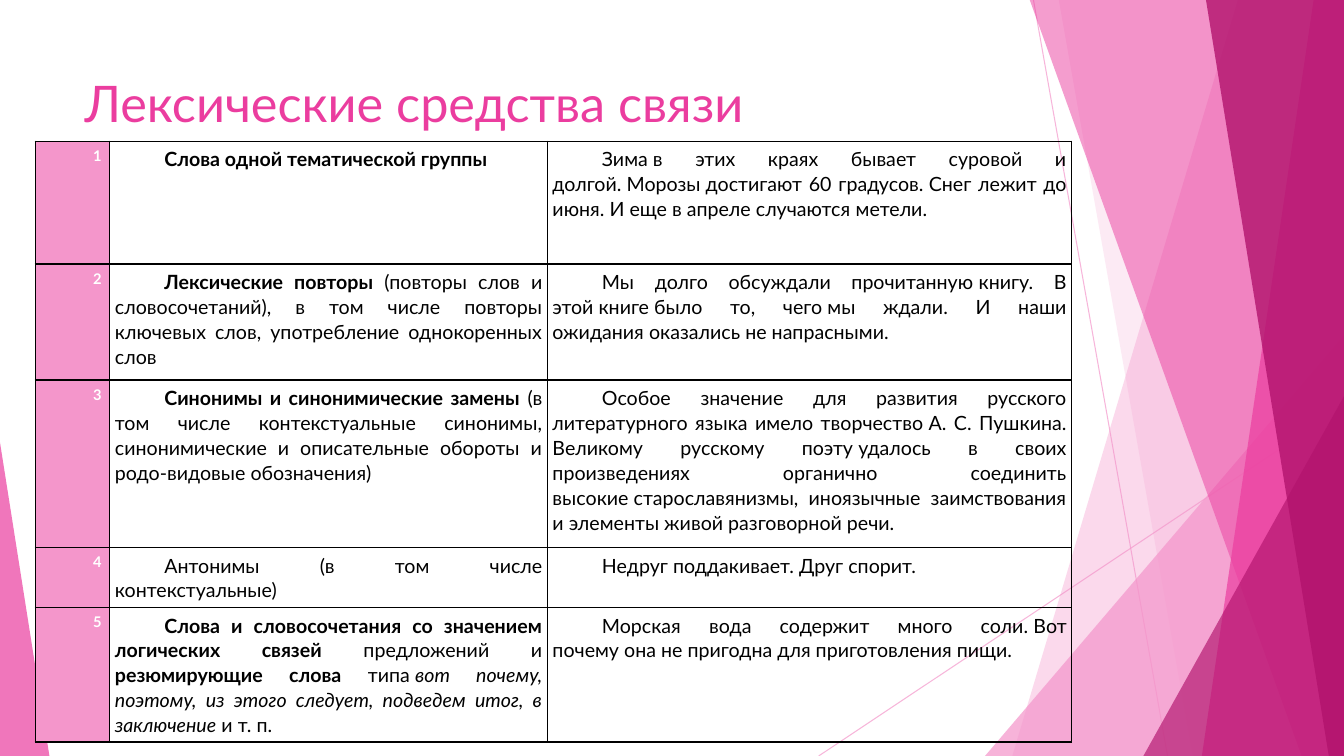
from lxml import etree
from pptx import Presentation
from pptx.dml.color import RGBColor
from pptx.enum.shapes import MSO_CONNECTOR, MSO_SHAPE
from pptx.enum.text import MSO_ANCHOR, PP_ALIGN
from pptx.oxml import parse_xml
from pptx.oxml.ns import nsdecls, qn
from pptx.util import Inches, Pt

FONT = "Lato"
PINK, MAGENTA, PLUM = "F496CB", "EB3D9F", "B2136D"
NBSP = chr(160)  # typed as ~ in the table content


def paint(fill, color, alpha=100):
    """Solid fill with opacity in percent."""
    fill.solid()
    fill.fore_color.rgb = RGBColor.from_string(color)
    if alpha < 100:
        clr = fill._xPr.find(".//" + qn("a:srgbClr"))
        etree.SubElement(clr, qn("a:alpha"), val=str(alpha * 1000))


prs = Presentation()
prs.slide_width, prs.slide_height = Inches(13.33), Inches(7.5)
s = prs.slides.add_slide(prs.slide_layouts[6])

# Thin crossing lines
for x1, y1, x2, y2 in [(10.25, 0, 11.58, 7.5), (13.33, 4.03, 8.12, 7.5)]:
    line = s.shapes.add_connector(MSO_CONNECTOR.STRAIGHT, Inches(x1), Inches(y1), Inches(x2), Inches(y2))
    line.line.width = Pt(0.75)
    paint(line.line.fill, PINK, 70)
    etree.SubElement(line._element.spPr, qn("a:effectLst"))

# Translucent facets, back to front
# band: top-left x, bottom-left x; triangle: left, top, width, apex position
facets = [
    ("band", (12.28, 10.04), PINK, 36),
    ("band", (10.5, 11.83), PINK, 20),
    ("triangle", (9.77, 3.33, 3.56, 1), PINK, 72),
    ("band", (10.21, 12.91), MAGENTA, 50),
    ("band", (13.03, 11.92), MAGENTA, 70),
    ("band", (11.96, 13.18), PLUM, 80),
    ("triangle", (11.34, 3.93, 1.99, 1), PLUM, 66),
    ("triangle", (0, 4.39, 0.49, 0), MAGENTA, 70),
]
for kind, geometry, color, alpha in facets:
    if kind == "band":
        top_x, bottom_x = geometry
        corners = [(13.33, -0.01), (13.33, 7.5), (bottom_x, 7.5)]
        outline = s.shapes.build_freeform(Inches(top_x), Inches(-0.01))
        outline.add_line_segments([(Inches(x), Inches(y)) for x, y in corners])
        sp = outline.convert_to_shape()
    else:
        left, top, width, apex = geometry
        sp = s.shapes.add_shape(MSO_SHAPE.ISOSCELES_TRIANGLE, Inches(left), Inches(top),
                                Inches(width), Inches(7.5 - top))
        sp.adjustments[0] = apex
    sp.shadow.inherit = False
    sp.line.fill.background()
    paint(sp.fill, color, alpha)

# Title
tf = s.shapes.add_textbox(Inches(0.74), Inches(0.67), Inches(9.4), Inches(0.74)).text_frame
tf.word_wrap = True
tf.vertical_anchor = MSO_ANCHOR.TOP
p = tf.paragraphs[0]
p.text = "Лексические средства связи"
p.font.name, p.font.size = FONT, Pt(36)
p.font.color.rgb = RGBColor.from_string(MAGENTA)

# Table content: (means of connection as styled runs, example)
rows = [
    ([("Слова одной тематической группы", "b")],
     "Зима~в этих краях бывает суровой и долгой.~Морозы~достигают 60 градусов.~"
     "Снег лежит до июня. И еще в апреле случаются~метели."),
    ([("Лексические повторы ", "b"),
      ("(повторы слов и словосочетаний), в том числе повторы ключевых слов, "
       "употребление однокоренных слов", "")],
     "Мы долго обсуждали прочитанную~книгу. В этой~книге~было то, чего~мы ждали. "
     "И наши ожидания~оказались не напрасными."),
    ([("Синонимы и синонимические замены ", "b"),
      ("(в том числе контекстуальные синонимы, синонимические и описательные обороты "
       "и родо-видовые обозначения)", "")],
     "Особое значение для развития русского литературного языка имело творчество~А. С. Пушкина. "
     "Великому русскому поэту~удалось в своих произведениях органично соединить "
     "высокие~старославянизмы, иноязычные заимствования и элементы живой разговорной речи."),
    ([("Антонимы (в том числе контекстуальные)", "")],
     "Недруг~поддакивает.~Друг~спорит."),
    ([("Слова и словосочетания со значением логических связей ", "b"),
      ("предложений и ", ""), ("резюмирующие слова ", "b"), ("типа~", ""),
      ("вот почему, поэтому, из этого следует, подведем итог, в заключение", "i"),
      ("~и~т. п.", "")],
     "Морская вода содержит много соли.~Вот почему~она не пригодна для приготовления пищи."),
]

# Table
table = s.shapes.add_table(len(rows), 3, Inches(0.35), Inches(1.4), Inches(10.28), Inches(5.68)).table
table.first_row = table.horz_banding = False
for column, width in zip(table.columns, [0.74, 4.34, 5.2]):
    column.width = Inches(width)
for row, height in zip(table.rows, [1.22, 1.15, 1.66, 0.5, 1.15]):
    row.height = Inches(height)

for i, (means, example) in enumerate(rows):
    for j, runs in enumerate([[(str(i + 1), "b")], means, [(example, "")]]):
        is_number = j == 0
        cell = table.cell(i, j)
        cell.margin_left = cell.margin_right = cell.margin_top = cell.margin_bottom = Inches(0.05)
        for side in ("lnL", "lnR", "lnT", "lnB"):
            cell._tc.get_or_add_tcPr().append(parse_xml(
                f'<a:{side} {nsdecls("a")} w="12700"><a:solidFill><a:srgbClr val="000000"/>'
                f'</a:solidFill></a:{side}>'))
        if is_number:
            paint(cell.fill, PINK)
        else:
            cell.fill.background()
        p = cell.text_frame.paragraphs[0]
        p.alignment = PP_ALIGN.CENTER if is_number else PP_ALIGN.JUSTIFY
        p.line_spacing, p.space_after = 1.06, Pt(8)
        p._p.get_or_add_pPr().set("indent", str(Inches(0.49)))
        p.font.name, p.font.size = FONT, Pt(10.5 if is_number else 14)
        p.font.color.rgb = RGBColor.from_string("FFFFFF" if is_number else "000000")
        for text, style in runs:
            r = p.add_run()
            r.text = text.replace("~", NBSP)
            r.font.bold, r.font.italic = style == "b", style == "i"

prs.save("out.pptx")
